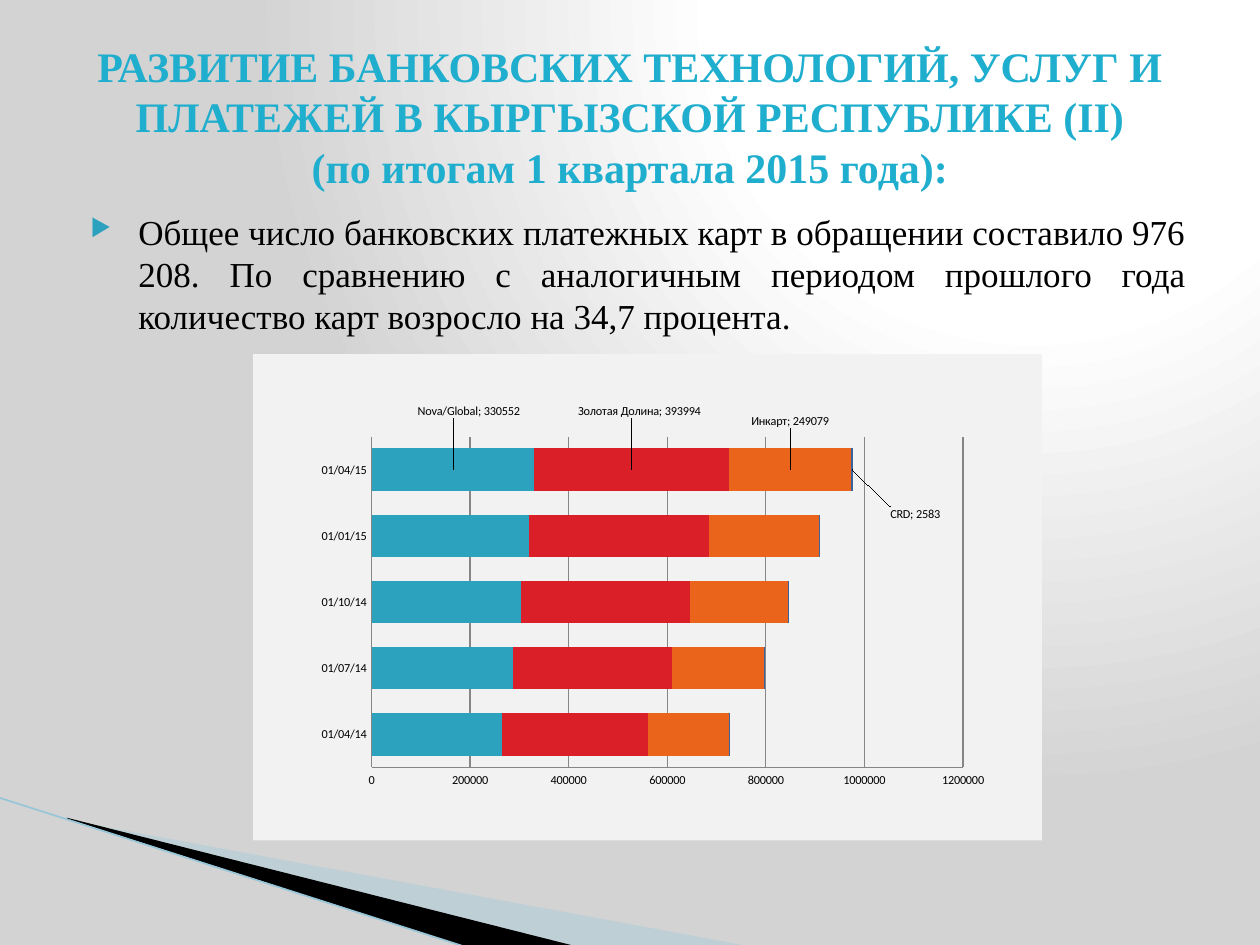
from pptx import Presentation
from pptx.chart.data import CategoryChartData as ChartData
from pptx.dml.color import RGBColor as RGB
from pptx.enum.chart import XL_CHART_TYPE as Kind, XL_TICK_MARK as Tick
from pptx.enum.shapes import MSO_CONNECTOR as Link
from pptx.enum.text import MSO_ANCHOR as Anchor, PP_ALIGN as Align
from pptx.oxml import parse_xml
from pptx.oxml.ns import nsdecls
from pptx.util import Inches, Pt

BLACK = RGB(0, 0, 0)
TEAL = RGB(0x2D, 0xA2, 0xBF)
RED = RGB(0xDA, 0x1F, 0x28)
ORANGE = RGB(0xEB, 0x64, 0x1B)
BLUE = RGB(0x39, 0x63, 0x9D)
TITLE = RGB(0x1F, 0xAE, 0xCD)
PALE = RGB(0xA0, 0xCB, 0xDC)
EDGE = RGB(0x97, 0xC5, 0xD8)
GRID = RGB(0x86, 0x86, 0x86)
SERIF = "Times New Roman"

HEAD = ("РАЗВИТИЕ БАНКОВСКИХ ТЕХНОЛОГИЙ, УСЛУГ И ПЛАТЕЖЕЙ В КЫРГЫЗСКОЙ РЕСПУБЛИКЕ (II)\n"
        "(по итогам 1 квартала 2015 года):")
BODY = ("Общее число банковских платежных карт в обращении составило 976 208. "
        "По сравнению с аналогичным периодом прошлого года количество карт "
        "возросло на 34,7 процента.")
DATES = ["01/04/14", "01/07/14", "01/10/14", "01/01/15", "01/04/15"]
# Name, colour, values, shift of the last label as a share of the chart
CARDS = [
    ("Nova/Global", TEAL, (263838, 287351, 302682, 318672, 330552), (0.02, -0.12)),
    ("Золотая Долина", RED, (298012, 323077, 342985, 366916, 393994), (0.01, -0.12)),
    ("Инкарт", ORANGE, (162752, 185710, 199941, 221417, 249079), (0, -0.1)),
    ("CRD", BLUE, (213, 547, 1645, 1903, 2583), (0.08, 0.09)),
]


def add_back(slide):
    stops = "".join(f'<a:gs pos="{pos}000"><a:srgbClr val="{tint}"/></a:gs>'
                    for pos, tint in ((0, "FFFFFF"), (40, "FFFFFF"), (100, "D3D3D3")))
    slide.element.cSld.insert(0, parse_xml(
        f'<p:bg {nsdecls("p", "a")}><p:bgPr><a:gradFill rotWithShape="1">'
        f'<a:gsLst>{stops}</a:gsLst><a:path path="circle">'
        '<a:fillToRect l="65000" t="0" r="0" b="98000"/></a:path></a:gradFill>'
        '<a:effectLst/></p:bgPr></p:bg>'))


def add_wedge(slide, left, top, points, tint, alpha=None):
    spots = [(Inches(left + x), Inches(top + y)) for x, y in points]
    draft = slide.shapes.build_freeform(*spots[0])
    draft.add_line_segments(spots[1:])
    wedge = draft.convert_to_shape()
    wedge.shadow.inherit = False
    wedge.fill.solid()
    wedge.fill.fore_color.rgb = tint
    wedge.line.fill.background()
    if alpha:
        color = wedge._element.spPr.find("{*}solidFill/{*}srgbClr")
        color.append(parse_xml(f'<a:alpha {nsdecls("a")} val="{alpha}000"/>'))


def add_corner(slide, left, top):
    # Two wedges and an edge line fan out from the left side
    add_wedge(slide, left + 0.55, top + 0.17,
              [(0, 0.01), (5.4, 1.01), (4.01, 1.01), (0, 0)], PALE, 40)
    add_wedge(slide, left + 0.53, top + 0.16,
              [(0, 0), (4.04, 1.02), (3.19, 1.03), (0.01, 0.01)], BLACK)
    edge = slide.shapes.add_connector(Link.STRAIGHT, Inches(left - 0.01), Inches(top),
                                      Inches(left + 3.71), Inches(top + 1.19))
    edge.line.color.rgb = EDGE
    edge.line.width = Pt(0.95)
    edge._element.spPr.append(parse_xml(f'<a:effectLst {nsdecls("a")}/>'))


def add_text(slide, box, text, size, tint, align):
    frame = slide.shapes.add_textbox(*map(Inches, box)).text_frame
    frame.word_wrap = True
    para = frame.paragraphs[0]
    para.text = text
    para.alignment = align
    for run in para.runs:
        run.font.name = SERIF
        run.font.size = Pt(size)
        run.font.color.rgb = tint
    return frame


def add_title(slide, box):
    frame = add_text(slide, box, HEAD, 24, TITLE, Align.CENTER)
    frame.vertical_anchor = Anchor.MIDDLE
    for run in frame.paragraphs[0].runs:
        run.font.bold = True


def add_body(slide, box):
    para = add_text(slide, box, BODY, 20, BLACK, Align.JUSTIFY).paragraphs[0]
    props = para._p.get_or_add_pPr()
    props.set("marL", str(Inches(0.49)))
    props.set("indent", str(Inches(-0.38)))
    for part in (f'buClr {nsdecls("a")}><a:srgbClr val="{TEAL}"/></a:buClr>',
                 f'buSzPct {nsdecls("a")} val="68000"/>',
                 f'buChar {nsdecls("a")} char="▶"/>'):
        props.append(parse_xml("<a:" + part))


def place(x, y, mode="", size=""):
    return (f'<c:layout {nsdecls("c")}><c:manualLayout>{mode}'
            f'<c:x val="{x}"/><c:y val="{y}"/>{size}</c:manualLayout></c:layout>')


def add_label(series, shift):
    # Label on the last bar only, tied to it by a leader line
    def flags(*shown):
        return "".join(f'<c:{name} val="{int(name in shown)}"/>' for name in (
            "showLegendKey", "showVal", "showCatName", "showSerName",
            "showPercent", "showBubbleSize"))
    old = series._element.get_or_add_dLbls()
    new = parse_xml(
        f'<c:dLbls {nsdecls("c", "a")}><c:dLbl><c:idx val="{len(DATES) - 1}"/>{place(*shift)}'
        f'{flags("showVal", "showSerName")}<c:separator>; </c:separator></c:dLbl>'
        f'{flags()}<c:extLst><c:ext uri="{{CE6537A1-D6FC-4f65-9D91-7224C49458BB}}" '
        'xmlns:c15="http://schemas.microsoft.com/office/drawing/2012/chart">'
        '<c15:showLeaderLines val="1"/></c:ext></c:extLst></c:dLbls>')
    old.getparent().replace(old, new)


def add_bars(slide, box):
    data = ChartData()
    data.categories = DATES
    for name, _, values, _ in CARDS:
        data.add_series(name, values)
    chart = slide.shapes.add_chart(Kind.BAR_STACKED, *map(Inches, box), data).chart
    chart.has_legend = False
    chart.has_title = False
    chart.font.name = "Calibri"
    chart.font.size = Pt(7)
    chart.font.color.rgb = BLACK

    # Axes and grid
    for axis in (chart.category_axis, chart.value_axis):
        axis.major_tick_mark = axis.minor_tick_mark = Tick.NONE
        axis.format.line.color.rgb = GRID
    axis.minimum_scale, axis.maximum_scale, axis.major_unit = 0, 1200000, 200000
    axis.has_major_gridlines = True
    axis.major_gridlines.format.line.color.rgb = GRID

    # Bars
    plot = chart.plots[0]
    plot.gap_width, plot.overlap = 55, 100
    plot.vary_by_categories = False
    for series, (_, tint, _, shift) in zip(plot.series, CARDS):
        series.format.fill.solid()
        series.format.fill.fore_color.rgb = tint
        add_label(series, shift)

    # Plot area and chart ground
    root = chart._chartSpace
    area = root.chart.plotArea
    for old in area.findall("{*}layout"):
        area.remove(old)
    area.insert(0, parse_xml(place(
        0.15, 0.17,
        '<c:layoutTarget val="inner"/><c:xMode val="edge"/><c:yMode val="edge"/>',
        '<c:w val="0.75"/><c:h val="0.68"/>')))
    root.chart.addnext(parse_xml(
        f'<c:spPr {nsdecls("c", "a")}><a:solidFill><a:srgbClr val="F2F2F2"/></a:solidFill>'
        '<a:ln><a:noFill/></a:ln></c:spPr>'))


def main():
    deck = Presentation()
    deck.slide_width, deck.slide_height = Inches(10), Inches(7.5)
    slide = deck.slides.add_slide(deck.slide_layouts[6])
    add_back(slide)
    add_corner(slide, 0, 6.33)
    add_body(slide, (0.51, 1.62, 9, 5.62))
    add_title(slide, (0.5, 0.3, 9, 1.24))
    add_bars(slide, (2.01, 2.81, 6.26, 3.86))
    deck.save("out.pptx")


if __name__ == "__main__":
    main()
